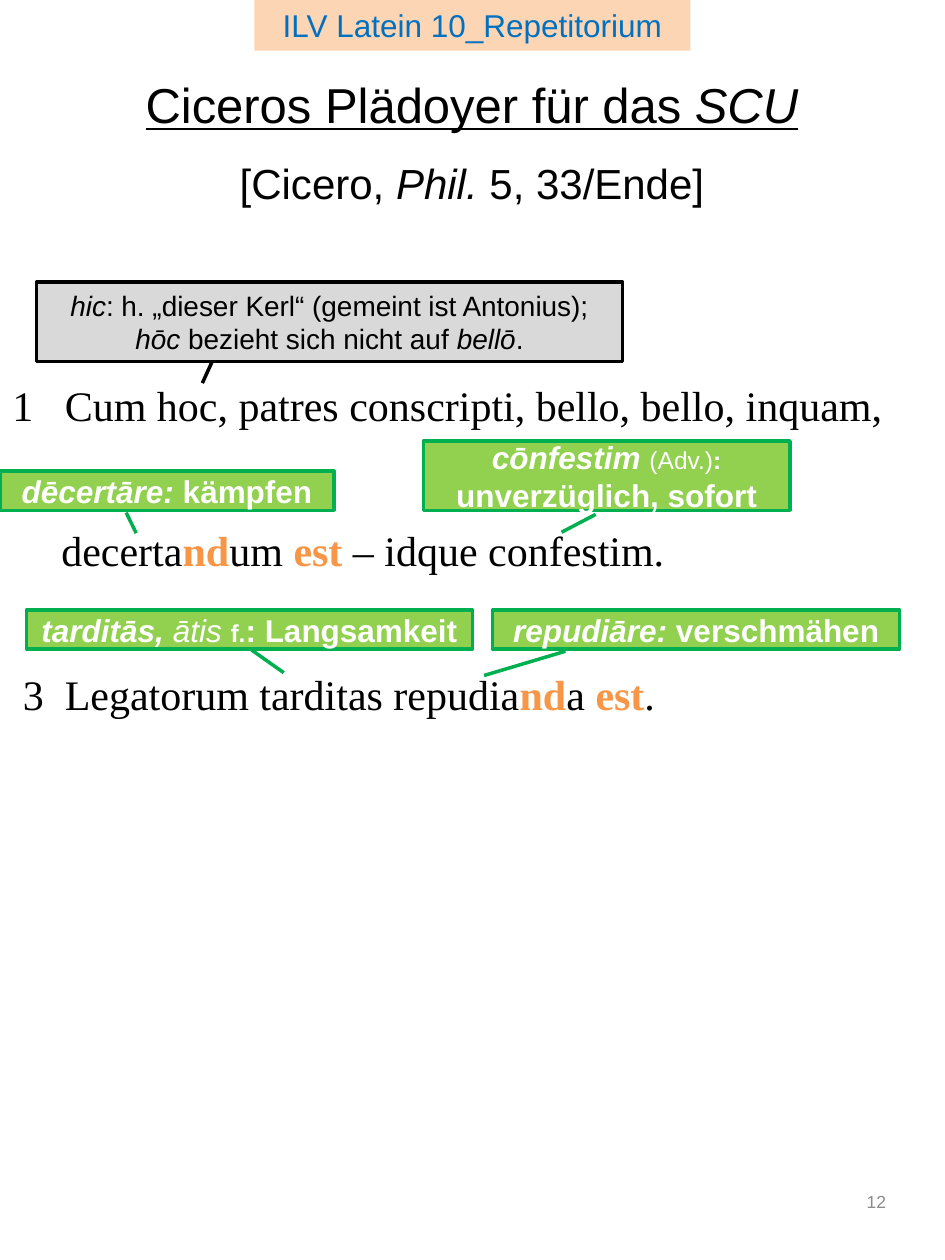
from pptx import Presentation
from pptx.dml.color import RGBColor
from pptx.enum import shapes, text
from pptx.util import Pt

CENTER, RIGHT, LEFT = text.PP_ALIGN.CENTER, text.PP_ALIGN.RIGHT, text.PP_ALIGN.LEFT
MIDDLE, TOP = text.MSO_ANCHOR.MIDDLE, text.MSO_ANCHOR.TOP
ITALIC, UPRIGHT = {"italic": True}, {"italic": False}
GERUNDIVE = {"bold": True, "color": "F79646"}


def rgb(value):
    return RGBColor.from_string(value)


def write(shape, paragraphs, align=CENTER, anchor=MIDDLE, **base):
    """Fill a shape with paragraphs of (text, format) runs; base holds the shared format."""
    frame = shape.text_frame
    frame.word_wrap = True
    frame.vertical_anchor = anchor
    for index, runs in enumerate(paragraphs):
        paragraph = frame.paragraphs[0] if index == 0 else frame.add_paragraph()
        paragraph.alignment = align
        for words, changes in runs:
            run = paragraph.add_run()
            run.text = words
            values = {"name": "Arial", "color": "000000", **base, **changes}
            run.font.color.rgb = rgb(values.pop("color"))
            values["size"] = Pt(values["size"])
            for key, value in values.items():
                setattr(run.font, key, value)
    return frame


prs = Presentation()
prs.slide_width, prs.slide_height = Pt(540), Pt(720)
slide = prs.slides.add_slide(prs.slide_layouts[6])
canvas = slide.shapes

# Headings
source = canvas.add_textbox(Pt(121), Pt(87.8), Pt(297.4), Pt(33.8))
write(source, [[("[Cicero, ", {}), ("Phil.", ITALIC), (" 5, 33/Ende]", {})]], size=24)

# Latin verses: one paragraph each, with the line number hanging to the left
verses = [
    (30, -30, [("1\tCum hoc, patres conscripti, bello, bello, inquam,", {})]),
    (28, 0, [("decerta", {}), ("nd", GERUNDIVE), ("um ", {}), ("est", GERUNDIVE),
             (" – idque confestim.", {})]),
    (30, -24, [("3\tLegatorum tarditas repudia", {}), ("nd", GERUNDIVE), ("a ", {}),
               ("est", GERUNDIVE), (".", {})]),
]
passage = canvas.add_textbox(0, Pt(139), Pt(540), Pt(430.6))
frame = write(passage, [runs for _, _, runs in verses], LEFT, TOP,
              size=24, name="Times New Roman")
frame.margin_top = Pt(78)
for paragraph, (margin, indent, _) in zip(frame.paragraphs, verses):
    paragraph.space_after = Pt(53.8)
    properties = paragraph._p.get_or_add_pPr()
    properties.set("marL", str(Pt(margin)))
    properties.set("indent", str(Pt(indent)))

title = canvas.add_textbox(Pt(71.3), Pt(31), Pt(396.7), Pt(56.9))
write(title, [[("Ciceros Plädoyer für das ", {}), ("SCU", ITALIC)]], size=28, underline=True)

course = canvas.add_shape(shapes.MSO_SHAPE.RECTANGLE, Pt(145.4), 0, Pt(249.1), Pt(29))
course.shadow.inherit = False
course.fill.solid()
course.fill.fore_color.rgb = rgb("FCD5B5")
course.line.fill.background()
write(course, [[("ILV Latein 10_Repetitorium", {})]], anchor=TOP, size=18, color="0070C0")

# Vocabulary callouts: box, pointer (y1, x1, y2, x2), colours, base format, paragraphs
GREY = ("D9D9D9", "000000", {"size": 16})
GREEN = ("92D050", "00B050", {"size": 18, "color": "FFFFFF", "bold": True})
SMALL = {"size": 14}
callouts = [
    ((20.9, 161.3, 334.8, 45.4), (0.994, 0.3, 1.27, 0.283), GREY,
     [[("hic", ITALIC), (": h. „dieser Kerl“ (gemeint ist Antonius);", UPRIGHT)],
      [("hōc", ITALIC), (" bezieht sich nicht auf ", UPRIGHT), ("bellō", ITALIC),
       (".", UPRIGHT)]]),
    ((0, 269.3, 190.8, 22.3), (1.06, 0.378, 1.588, 0.408), GREEN,
     [[("dēcertāre: ", ITALIC), ("kämpfen", UPRIGHT)]]),
    ((241.9, 252, 209.5, 39.6), (1.06, 0.47, 1.317, 0.377), GREEN,
     [[("cōnfestim ", ITALIC), ("(Adv.)", {"bold": False, **SMALL}), (":", SMALL)],
      [("unverzüglich, sofort", {})]]),
    ((15.1, 348.5, 254.9, 22.3), (1.029, 0.505, 1.611, 0.577), GREEN,
     [[("tarditās, ", ITALIC), ("ātis ", {"bold": False, **ITALIC}), ("f.", SMALL),
       (": Langsamkeit", {})]]),
    ((281.5, 348.5, 232.6, 22.3), (1.06, 0.179, 1.682, -0.021), GREEN,
     [[("repudiāre: ", ITALIC), ("verschmähen", UPRIGHT)]]),
]
for box, pointer, (fill, border, base), paragraphs in callouts:
    gloss = canvas.add_shape(shapes.MSO_SHAPE.LINE_CALLOUT_1, *map(Pt, box))
    gloss.shadow.inherit = False
    for index, value in enumerate(pointer):
        gloss.adjustments[index] = value
    gloss.fill.solid()
    gloss.fill.fore_color.rgb = rgb(fill)
    gloss.line.color.rgb = rgb(border)
    gloss.line.width = Pt(2)
    write(gloss, paragraphs, **base)

page_number = canvas.add_textbox(Pt(387.4), Pt(667.4), Pt(126), Pt(38.2))
write(page_number, [[("12", {})]], RIGHT, size=10, color="8C8C8C")

prs.save("out.pptx")
